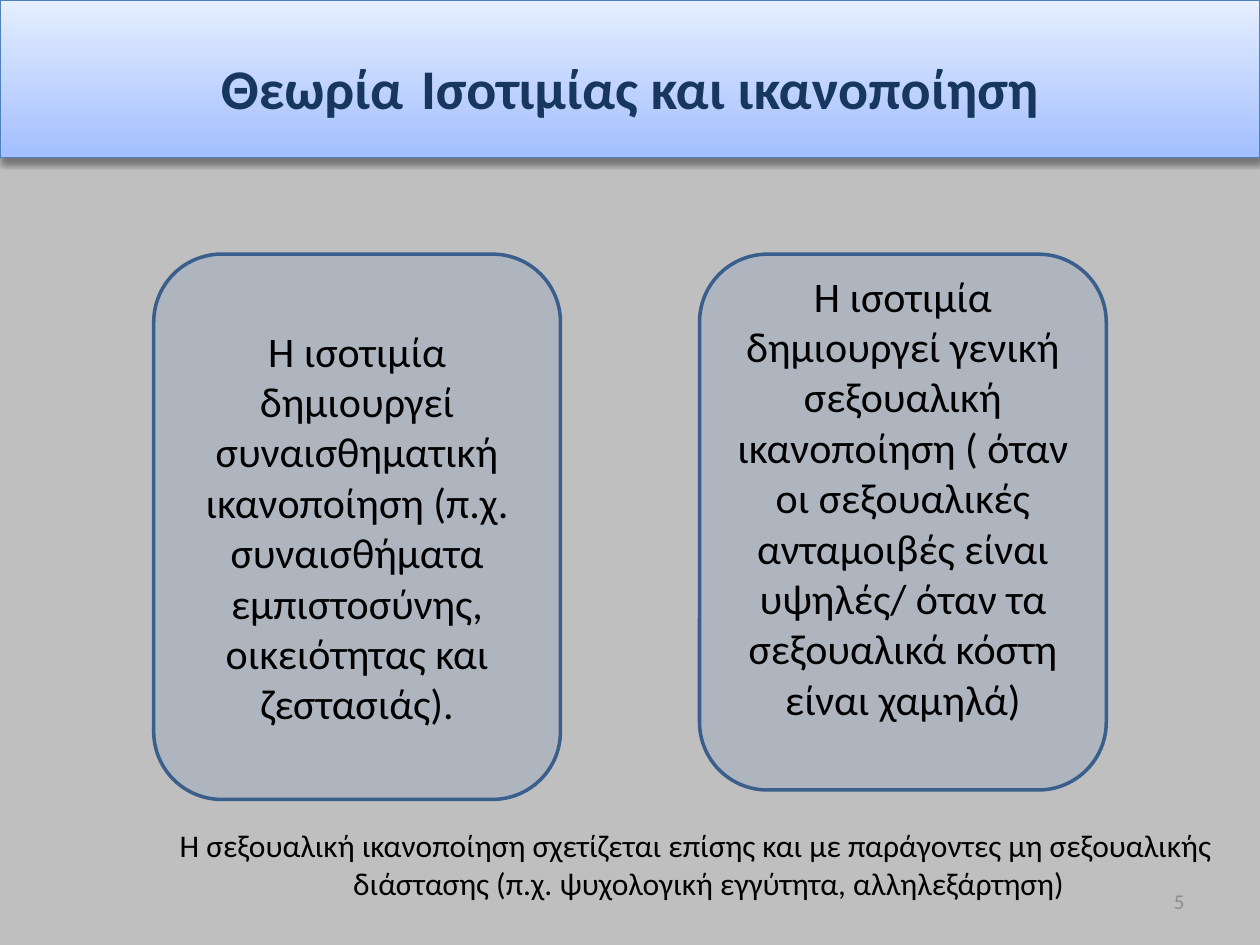
from lxml.etree import SubElement
from pptx import Presentation
from pptx.dml.color import RGBColor
from pptx.enum.shapes import MSO_SHAPE
from pptx.enum.text import MSO_ANCHOR, PP_ALIGN
from pptx.oxml.ns import qn
from pptx.util import Emu, Inches, Pt

GREY = RGBColor(0xBF, 0xBF, 0xBF)
NAVY = RGBColor(0x17, 0x37, 0x5E)
BLACK = RGBColor(0, 0, 0)
MUTED = RGBColor(0x8C, 0x8C, 0x8C)
BLUE = RGBColor(0x4F, 0x81, 0xBD)
EDGE = RGBColor(0x3A, 0x5F, 0x8C)
SKY_TOP = RGBColor(0xE5, 0xEE, 0xFF)
SKY_BOTTOM = RGBColor(0xA3, 0xBF, 0xFF)

W, H = Inches(10), Inches(7.5)
TITLE = {"size": Pt(32), "bold": True, "color": NAVY}
TITLE_GAP = {"size": Pt(44), "bold": False, "color": BLACK}
CARD = {"size": Pt(24), "color": BLACK}
NOTE_LEAD = {"size": Pt(14), "color": BLACK}
NOTE = {"size": Pt(18), "color": BLACK}
NUMBER = {"size": Pt(12), "color": MUTED}

CARDS = [
    ("Η ισοτιμία δημιουργεί συναισθηματική ικανοποίηση (π.χ. συναισθήματα "
     "εμπιστοσύνης, οικειότητας και ζεστασιάς).", 0.577, Inches(0.05)),
    ("Η ισοτιμία δημιουργεί γενική σεξουαλική ικανοποίηση ( όταν οι σεξουαλικές "
     "ανταμοιβές είναι υψηλές/ όταν τα σεξουαλικά κόστη είναι χαμηλά)", 0.567, Inches(0.45)),
]


def share(x, y, w, h):
    return Emu(int(x * W)), Emu(int(y * H)), Emu(int(w * W)), Emu(int(h * H))


def write(sp, runs, align, anchor):
    tf = sp.text_frame
    for name, value in {"word_wrap": True, "vertical_anchor": anchor}.items():
        setattr(tf, name, value)
    p = tf.paragraphs[0]
    p.alignment = align
    for text, fmt in runs:
        r = p.add_run()
        r.text = text
        r.font.name = "Calibri"
        for name, value in fmt.items():
            if name == "color":
                r.font.color.rgb = value
            else:
                setattr(r.font, name, value)
    return p


def add_title(s, box):
    sp = s.shapes.add_shape(MSO_SHAPE.RECTANGLE, *box)
    sp.fill.gradient()
    sp.fill.gradient_angle = 270
    for stop, color, position in zip(sp.fill.gradient_stops, (SKY_TOP, SKY_BOTTOM), (0, 1)):
        stop.color.rgb = color
        stop.position = position
    sp.line.color.rgb = BLUE
    sp.line.width = Pt(0.75)
    sp.shadow.inherit = False
    effects = sp._element.spPr.find(qn("a:effectLst"))
    shadow = SubElement(effects, qn("a:outerShdw"), blurRad="40000", dist="40000",
                        dir="5400000", rotWithShape="0")
    color = SubElement(shadow, qn("a:srgbClr"), val="000000")
    SubElement(color, qn("a:alpha"), val="38000")
    runs = [("Θεωρία", TITLE), (" ", TITLE_GAP), ("Ισοτιμίας και ικανοποίηση", TITLE)]
    write(sp, runs, PP_ALIGN.CENTER, MSO_ANCHOR.MIDDLE)


def add_card(s, box, text, bottom):
    sp = s.shapes.add_shape(MSO_SHAPE.ROUNDED_RECTANGLE, *box)
    sp.shadow.inherit = False
    sp.fill.solid()
    sp.fill.fore_color.rgb = BLUE
    color = sp._element.spPr.find(qn("a:solidFill")).find(qn("a:srgbClr"))
    SubElement(color, qn("a:alpha"), val="15000")
    sp.line.color.rgb = EDGE
    sp.line.width = Pt(2)
    sp.text_frame.margin_bottom = bottom
    write(sp, [(text, CARD)], PP_ALIGN.CENTER, MSO_ANCHOR.MIDDLE)


def add_cards(s, box):
    left, top, width, height = box
    pitch = int(width * 0.573)
    for i, (text, rows, bottom) in enumerate(CARDS):
        card = left + i * pitch, top, width - pitch, int(height * rows)
        add_card(s, card, text, bottom)


def add_note(s, box):
    sp = s.shapes.add_textbox(*box)
    text = ("Η σεξουαλική ικανοποίηση σχετίζεται επίσης και με παράγοντες μη σεξουαλικής "
            "διάστασης (π.χ. ψυχολογική εγγύτητα, αλληλεξάρτηση)")
    p = write(sp, [(" ", NOTE_LEAD), (text, NOTE)], PP_ALIGN.CENTER, MSO_ANCHOR.TOP)
    p.space_before = Pt(3.6)
    pPr = p._p.get_or_add_pPr()
    for name, value in {"marL": Inches(1.25), "indent": Inches(-0.25)}.items():
        pPr.set(name, str(int(value)))


def add_number(s, box):
    sp = s.shapes.add_textbox(*box)
    write(sp, [("5", NUMBER)], PP_ALIGN.RIGHT, MSO_ANCHOR.MIDDLE)


def main():
    prs = Presentation()
    prs.slide_width, prs.slide_height = W, H
    s = prs.slides.add_slide(prs.slide_layouts[6])
    s.background.fill.solid()
    s.background.fill.fore_color.rgb = GREY
    add_title(s, share(0, 0, 1, 1 / 6))
    add_note(s, share(0, 0.868, 1, 0.112))
    add_number(s, share(0.717, 0.927, 0.233, 0.053))
    add_cards(s, share(0.122, 0.269, 0.756, 1))
    prs.save("out.pptx")


if __name__ == "__main__":
    main()
